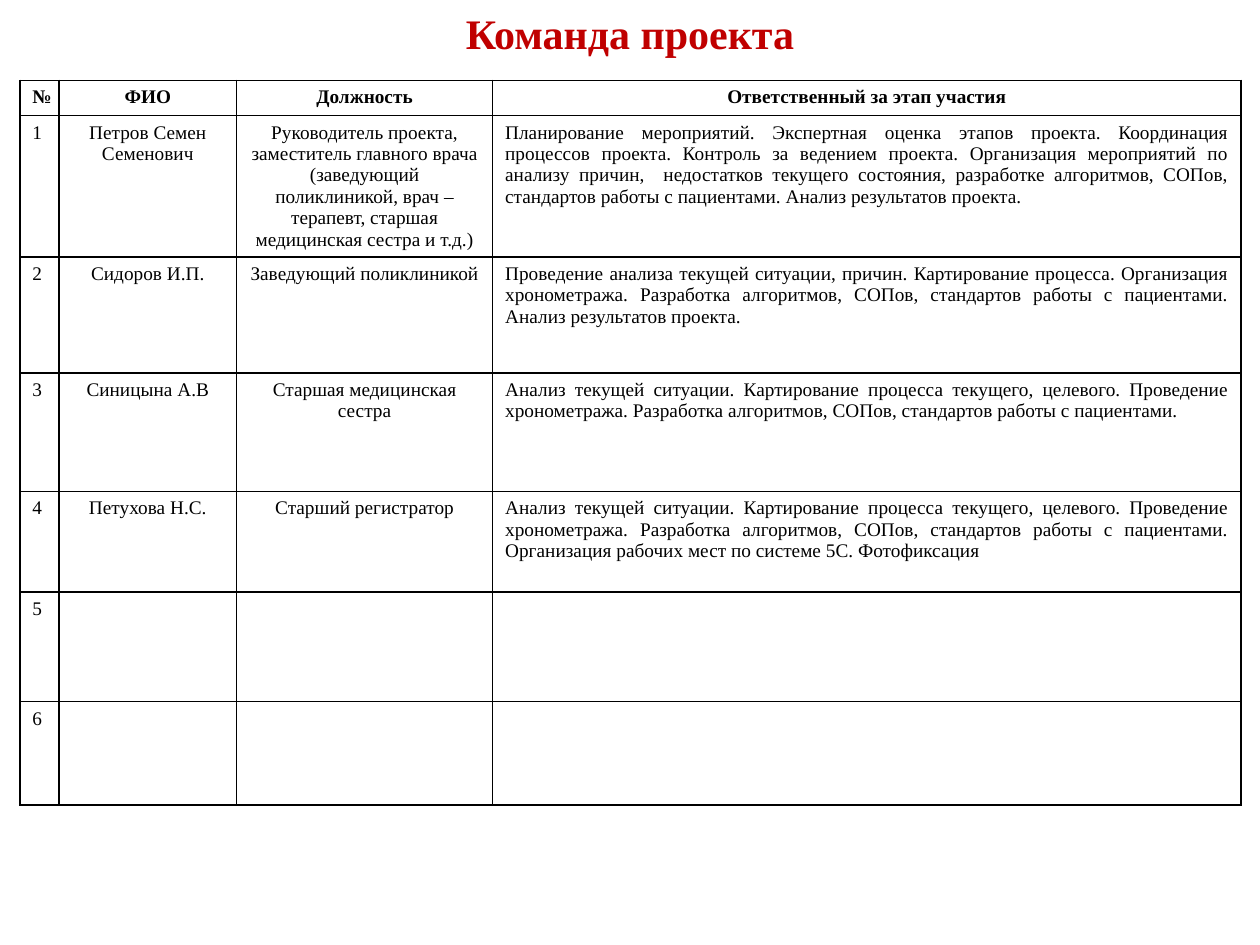
from dataclasses import dataclass

from lxml import etree
from pptx import Presentation
from pptx.dml.color import RGBColor
from pptx.enum.text import MSO_ANCHOR, MSO_AUTO_SIZE, PP_ALIGN
from pptx.oxml.ns import qn
from pptx.util import Cm, Pt


@dataclass(frozen=True)
class Theme:
    font: str = "Times New Roman"
    title_color: str = "C00000"
    ink: str = "000000"
    title_size: int = 24
    table_size: int = 11
    border_width: int = 1


HEADINGS = ["№", "ФИО", "Должность", "Ответственный за этап участия"]
MEMBERS = [
    ("Петров Семен Семенович",
     "Руководитель проекта, заместитель главного врача (заведующий поликлиникой, "
     "врач – терапевт, старшая медицинская сестра и т.д.)",
     "Планирование мероприятий. Экспертная оценка этапов проекта. Координация "
     "процессов проекта. Контроль за ведением проекта. Организация мероприятий по "
     "анализу причин,  недостатков текущего состояния, разработке алгоритмов, СОПов, "
     "стандартов работы с пациентами. Анализ результатов проекта."),
    ("Сидоров И.П.",
     "Заведующий поликлиникой",
     "Проведение анализа текущей ситуации, причин. Картирование процесса. Организация "
     "хронометража. Разработка алгоритмов, СОПов, стандартов работы с пациентами. "
     "Анализ результатов проекта."),
    ("Синицына А.В",
     "Старшая медицинская сестра",
     "Анализ текущей ситуации. Картирование процесса текущего, целевого. Проведение "
     "хронометража. Разработка алгоритмов, СОПов, стандартов работы с пациентами."),
    ("Петухова Н.С.",
     "Старший регистратор",
     "Анализ текущей ситуации. Картирование процесса текущего, целевого. Проведение "
     "хронометража. Разработка алгоритмов, СОПов, стандартов работы с пациентами. "
     "Организация рабочих мест по системе 5С. Фотофиксация"),
    ("", "", ""),
    ("", "", ""),
]
COLUMN_WIDTHS = [0.79, 3.58, 5.16, 15.09]
ROW_HEIGHTS = [0.71, 2.39, 2.34, 2.39, 2.03, 2.21, 2.08]
BODY_ALIGNMENTS = [PP_ALIGN.LEFT, PP_ALIGN.CENTER, PP_ALIGN.CENTER, PP_ALIGN.JUSTIFY]


class SlideBuilder:
    def __init__(self, slide, theme):
        self.slide = slide
        self.theme = theme

    def add_text(self, frame, text, size, color, bold, alignment):
        paragraph = frame.paragraphs[0]
        paragraph.alignment = alignment
        run = paragraph.add_run()
        run.text = text
        formats = {"name": self.theme.font, "size": Pt(size), "bold": bold}
        for attribute, value in formats.items():
            setattr(run.font, attribute, value)
        run.font.color.rgb = RGBColor.from_string(color)

    def add_title(self, text, left, top, width, height):
        heading = self.slide.shapes.title
        box = {"left": left, "top": top, "width": width, "height": height}
        for attribute, value in box.items():
            setattr(heading, attribute, Cm(value))
        frame = heading.text_frame
        layout = {"word_wrap": True, "auto_size": MSO_AUTO_SIZE.NONE,
                  "vertical_anchor": MSO_ANCHOR.MIDDLE,
                  "margin_top": 0, "margin_bottom": 0}
        for attribute, value in layout.items():
            setattr(frame, attribute, value)
        self.add_text(frame, text, self.theme.title_size, self.theme.title_color,
                      True, PP_ALIGN.CENTER)

    def add_borders(self, cell):
        properties = cell._tc.get_or_add_tcPr()
        for side in ("a:lnL", "a:lnR", "a:lnT", "a:lnB"):
            line = etree.SubElement(properties, qn(side),
                                    w=str(Pt(self.theme.border_width)))
            fill = etree.SubElement(line, qn("a:solidFill"))
            etree.SubElement(fill, qn("a:srgbClr"), val=self.theme.ink)

    def add_table(self, rows, left, top, widths, heights, alignments):
        """Draw a ruled table whose first row is a bold, centred header."""
        table = self.slide.shapes.add_table(
            len(rows), len(widths), Cm(left), Cm(top),
            Cm(sum(widths)), Cm(sum(heights))).table
        table.first_row = table.horz_banding = False
        for column, width in zip(table.columns, widths):
            column.width = Cm(width)
        for row, height in zip(table.rows, heights):
            row.height = Cm(height)
        for r, texts in enumerate(rows):
            is_header = r == 0
            for c, text in enumerate(texts):
                cell = table.cell(r, c)
                self.add_borders(cell)
                cell.fill.background()
                if text:
                    self.add_text(cell.text_frame, text, self.theme.table_size,
                                  self.theme.ink, is_header,
                                  PP_ALIGN.CENTER if is_header else alignments[c])


def main():
    presentation = Presentation()
    presentation.slide_width = Cm(25.4)
    presentation.slide_height = Cm(19.05)
    title_only = presentation.slide_layouts[5]
    builder = SlideBuilder(presentation.slides.add_slide(title_only), Theme())
    builder.add_title("Команда проекта", 1.27, 0.33, 22.86, 0.66)
    numbered = [(str(n), *member) for n, member in enumerate(MEMBERS, start=1)]
    builder.add_table([HEADINGS, *numbered], 0.4, 1.62,
                      COLUMN_WIDTHS, ROW_HEIGHTS, BODY_ALIGNMENTS)
    presentation.save("out.pptx")


if __name__ == "__main__":
    main()
